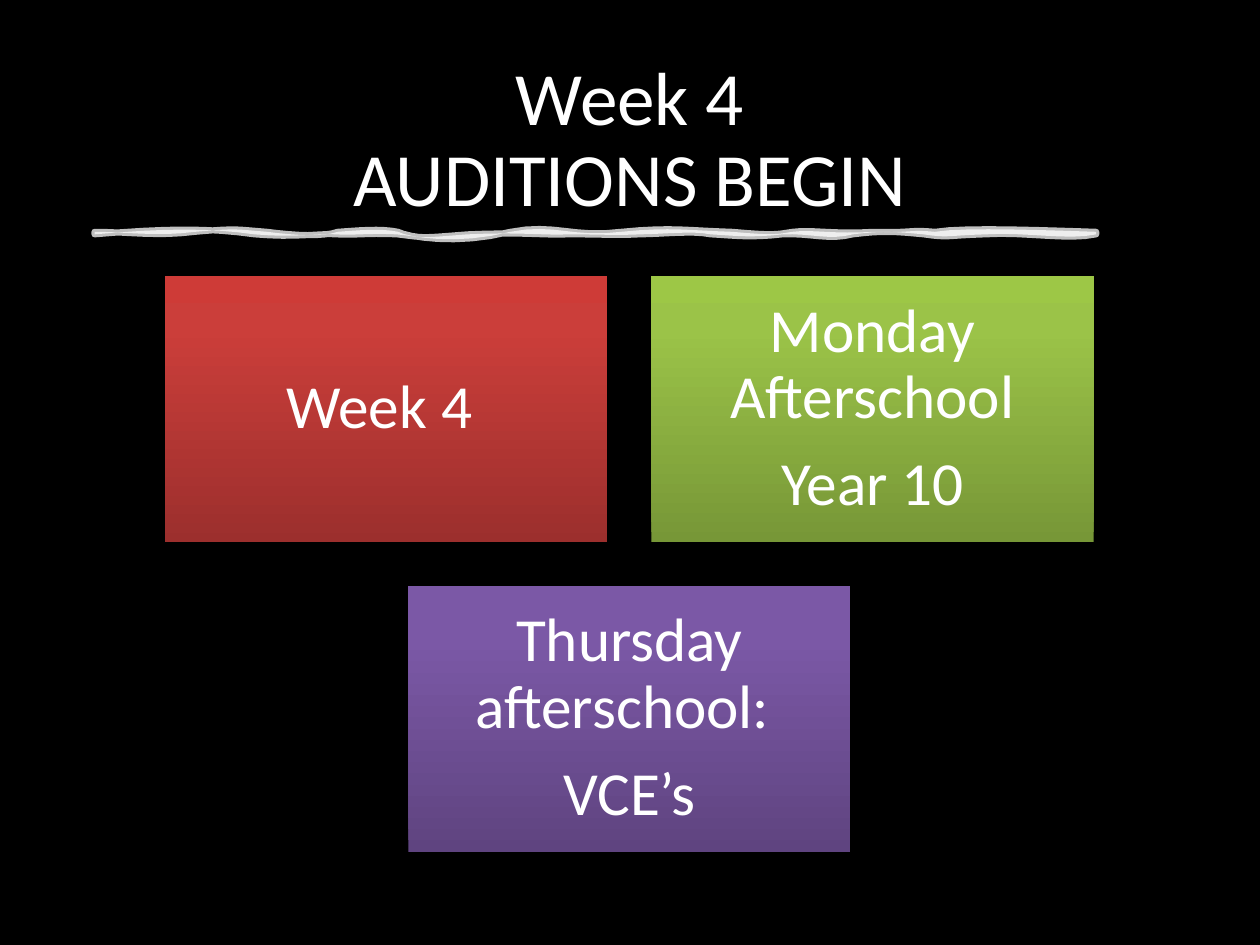
from copy import deepcopy

from pptx import Presentation
from pptx.dml.color import RGBColor
from pptx.enum.shapes import MSO_SHAPE
from pptx.enum.text import MSO_ANCHOR, MSO_AUTO_SIZE, PP_ALIGN
from pptx.oxml.ns import qn
from pptx.util import Inches, Pt
from lxml import etree

RECTANGLE = MSO_SHAPE.RECTANGLE
MIDDLE = MSO_ANCHOR.MIDDLE
CENTER = PP_ALIGN.CENTER
NO_AUTOFIT = MSO_AUTO_SIZE.NONE

COLORS = {
    "background": "000000",
    "white": "FFFFFF",
    "red": ("9C2F2D", "CB3E3A", "CE3B37"),
    "green": ("779737", "9BC348", "9DC746"),
    "purple": ("5F4480", "7B58A6", "7C57A8"),
}
STOP_POSITIONS = (0, 0.8, 1)
FRAME_FORMAT = {"vertical_anchor": MIDDLE, "word_wrap": True, "auto_size": NO_AUTOFIT}
PARAGRAPH_FORMAT = {"alignment": CENTER, "line_spacing": 0.9}


def format_text(text_frame, size, space_after):
    for name, value in FRAME_FORMAT.items():
        setattr(text_frame, name, value)
    for paragraph in text_frame.paragraphs:
        for name, value in PARAGRAPH_FORMAT.items():
            setattr(paragraph, name, value)
        paragraph.space_after = Pt(space_after)
        for run in paragraph.runs:
            run.font.name = "Calibri"
            run.font.size = Pt(size)
            run.font.color.rgb = RGBColor.from_string(COLORS["white"])


presentation = Presentation()
presentation.slide_width = Inches(10)
presentation.slide_height = Inches(7.5)
slide = presentation.slides.add_slide(presentation.slide_layouts[5])
slide.background.fill.solid()
slide.background.fill.fore_color.rgb = RGBColor.from_string(COLORS["background"])

# Title
title = slide.shapes.title
title.left, title.top = Inches(0.69), Inches(0.4)
title.width, title.height = Inches(8.62), Inches(1.45)
title.text_frame.text = "Week 4\vAUDITIONS BEGIN"
format_text(title.text_frame, 43, 0)

# Hand-drawn underline: each curve is two control points and an end point
START = (0.75, 1.84)
CURVES = [
    (1.01, 1.84, 1.24, 1.88, 1.55, 1.84), (1.89, 1.81, 1.86, 1.82, 2.12, 1.84),
    (2.35, 1.87, 2.57, 1.88, 2.68, 1.84), (2.83, 1.83, 3.02, 1.81, 3.16, 1.84),
    (3.23, 1.88, 3.63, 1.95, 4.05, 1.84), (4.40, 1.77, 4.55, 1.89, 4.93, 1.84),
    (5.34, 1.80, 5.46, 1.83, 5.81, 1.84), (6.15, 1.87, 6.16, 1.86, 6.29, 1.84),
    (6.45, 1.82, 6.61, 1.86, 6.94, 1.84), (7.25, 1.85, 7.21, 1.82, 7.42, 1.84),
    (7.66, 1.80, 8.36, 1.83, 8.70, 1.84), (8.70, 1.85, 8.70, 1.85, 8.70, 1.86),
    (8.48, 1.91, 8.14, 1.84, 7.82, 1.86), (7.50, 1.87, 7.53, 1.89, 7.33, 1.86),
    (7.11, 1.84, 7.01, 1.83, 6.77, 1.86), (6.58, 1.91, 6.43, 1.85, 6.21, 1.86),
    (5.96, 1.89, 5.82, 1.87, 5.64, 1.86), (5.50, 1.83, 5.24, 1.86, 5.08, 1.86),
    (4.90, 1.87, 4.74, 1.86, 4.52, 1.86), (4.30, 1.87, 4.14, 1.84, 3.71, 1.86),
    (3.32, 1.89, 3.40, 1.89, 3.15, 1.86), (2.89, 1.85, 2.80, 1.87, 2.67, 1.86),
    (2.52, 1.85, 2.35, 1.89, 2.02, 1.86), (1.66, 1.81, 1.33, 1.81, 0.75, 1.86),
]
STEPS = 8
points = []
x0, y0 = START
for x1, y1, x2, y2, x3, y3 in CURVES:
    for step in range(1, STEPS + 1):
        t = step / STEPS
        weights = ((1 - t) ** 3, 3 * t * (1 - t) ** 2, 3 * t ** 2 * (1 - t), t ** 3)
        x = sum(w * v for w, v in zip(weights, (x0, x1, x2, x3)))
        y = sum(w * v for w, v in zip(weights, (y0, y1, y2, y3)))
        points.append((Inches(x), Inches(y)))
    x0, y0 = x3, y3
builder = slide.shapes.build_freeform(Inches(START[0]), Inches(START[1]))
builder.add_line_segments(points, close=True)
underline = builder.convert_to_shape()
underline.shadow.inherit = False
underline.line.width = Pt(3.5)
for fill in (underline.fill, underline.line.fill):
    fill.solid()
    fill.fore_color.rgb = RGBColor.from_string(COLORS["white"])
for color in underline._element.spPr.iter(qn("a:srgbClr")):
    etree.SubElement(color, qn("a:alpha")).set("val", "75000")
line_element = underline._element.spPr.find(qn("a:ln"))
etree.SubElement(line_element, qn("a:round"))

# Session cards: two on the first row, one centred below
CARD_WIDTH, CARD_HEIGHT, GAP = 3.51, 2.11, 0.35
LEFT, TOP = 1.31, 2.19
COLUMN_STEP = CARD_WIDTH + GAP
CARDS = [
    (0, 0, "red", "Week 4 "),
    (1, 0, "green", "Monday Afterschool\nYear 10"),
    (0.5, 1, "purple", "Thursday afterschool: \nVCE’s"),
]
for column, row, color_name, text in CARDS:
    card = slide.shapes.add_shape(
        RECTANGLE,
        Inches(LEFT + column * COLUMN_STEP),
        Inches(TOP + row * (CARD_HEIGHT + GAP)),
        Inches(CARD_WIDTH),
        Inches(CARD_HEIGHT),
    )
    card.shadow.inherit = False
    card.line.fill.background()
    card.fill.gradient()
    card.fill.gradient_angle = 90
    stop_list = card._element.spPr.find(".//" + qn("a:gsLst"))
    stop_list.append(deepcopy(stop_list[-1]))
    for stop, position, color in zip(card.fill.gradient_stops, STOP_POSITIONS, COLORS[color_name]):
        stop.position = position
        stop.color.rgb = RGBColor.from_string(color)
    text_frame = card.text_frame
    text_frame.text = text
    for side in ("left", "top", "right", "bottom"):
        setattr(text_frame, f"margin_{side}", Inches(0.15))
    format_text(text_frame, 35, 12)

presentation.save("out.pptx")
